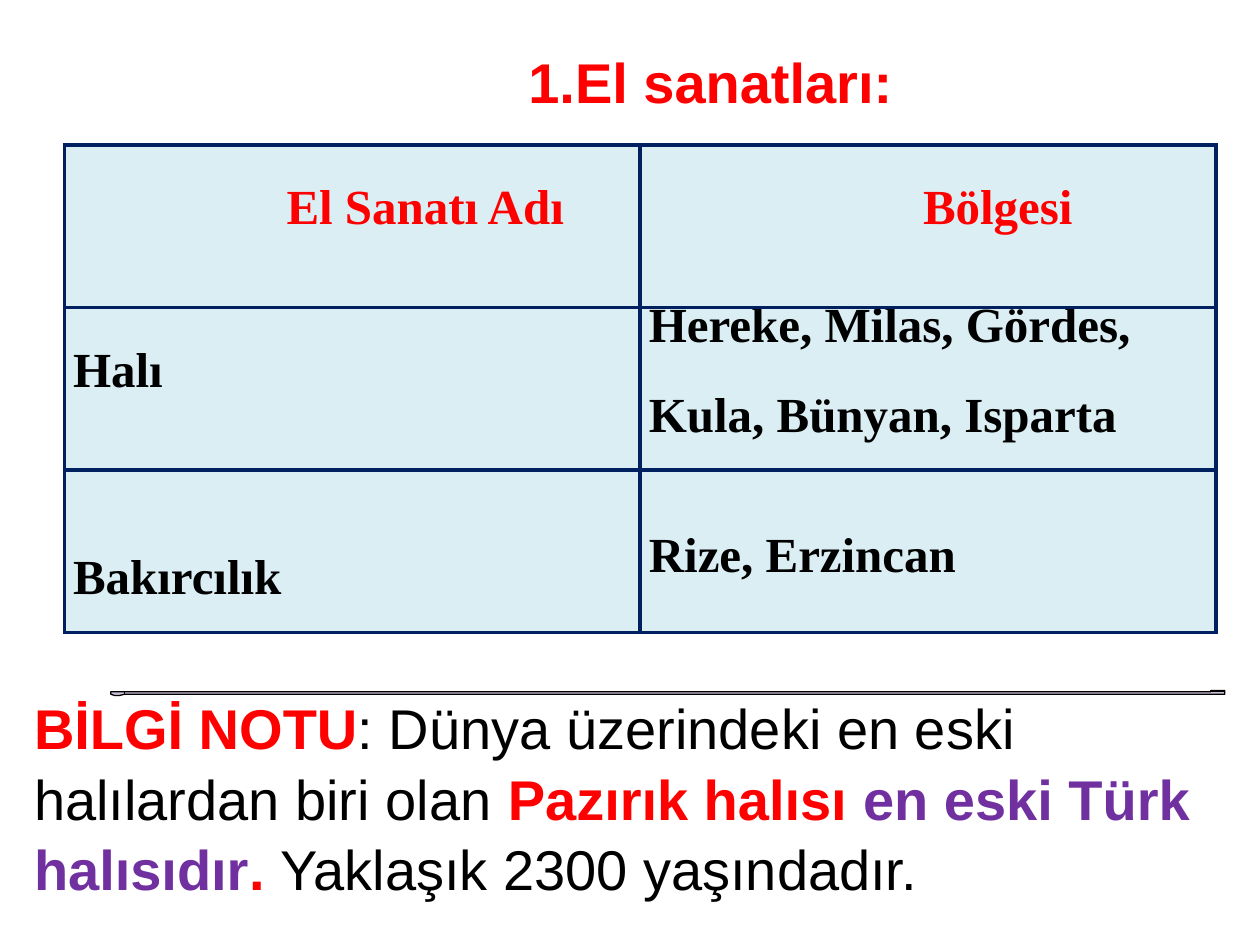
from lxml.etree import SubElement
from pptx import Presentation
from pptx.dml.color import RGBColor
from pptx.enum.text import MSO_ANCHOR as Anchor, MSO_AUTO_SIZE as AutoSize, PP_ALIGN as Align
from pptx.oxml.ns import qn
from pptx.util import Inches, Pt

RED = RGBColor(0xFF, 0x00, 0x00)
BLACK = RGBColor(0x00, 0x00, 0x00)
PURPLE = RGBColor(0x70, 0x30, 0xA0)
NAVY = RGBColor(0x00, 0x20, 0x60)
PALE_BLUE = RGBColor(0xDA, 0xEE, 0xF3)
LILAC = RGBColor(0xCC, 0xC0, 0xD9)
LINE_PITCH = 12.9


def style_run(run, face, size, color, bold=True):
    run.font.name = face
    run.font.size = Pt(size)
    run.font.color.rgb = color
    run.font.bold = bold


def add_border(cell, side):
    edge = SubElement(cell._tc.get_or_add_tcPr(), qn(f"a:ln{side}"), w=str(Pt(2.25)))
    fill = SubElement(edge, qn("a:solidFill"))
    SubElement(fill, qn("a:srgbClr"), val=str(NAVY))


prs = Presentation()
prs.slide_width, prs.slide_height = Inches(10), Inches(7.5)
slide = prs.slides.add_slide(prs.slide_layouts[5])

title = slide.shapes.title
title.left, title.top = Inches(0.98), Inches(0.3)
title.width, title.height = Inches(8.82), Inches(0.94)
heading = title.text_frame
heading.text = "El sanatları:"
heading.auto_size = AutoSize.NONE
heading.vertical_anchor = Anchor.MIDDLE
heading.margin_bottom = Inches(0.3)
heading_line = heading.paragraphs[0]
heading_line.alignment = Align.CENTER
style_run(heading_line.runs[0], "Arial", 32, RED)
numbering = heading_line._p.get_or_add_pPr()
numbering.set("marL", str(Inches(0.5)))
numbering.set("indent", "0")
number_color = SubElement(numbering, qn("a:buClr"))
SubElement(number_color, qn("a:srgbClr"), val=str(RED))
SubElement(numbering, qn("a:buFont"), typeface="Arial")
SubElement(numbering, qn("a:buAutoNum"), type="arabicPeriod")

# (text, lines of space above the first line)
crafts_rows = [
    [("El Sanatı Adı", 3), ("Bölgesi", 3)],
    [("Halı", 3), ("Hereke, Milas, Gördes,\nKula, Bünyan, Isparta", 1)],
    [("Bakırcılık", 5), ("Rize, Erzincan", 4)],
]
header_indents = [1.16, 1.11]
crafts = slide.shapes.add_table(
    3, 2, Inches(0.51), Inches(1.15), Inches(9.14), Inches(3.87)).table
for column in crafts.columns:
    column.width = Inches(4.57)
for r, row in enumerate(crafts_rows):
    crafts.rows[r].height = Inches(1.29)
    for c, (text, lines_above) in enumerate(row):
        cell = crafts.cell(r, c)
        cell.margin_left = cell.margin_right = cell.margin_bottom = 0
        cell.margin_top = Pt(lines_above * LINE_PITCH)
        for side in "LRTB":
            add_border(cell, side)
        cell.fill.solid()
        cell.fill.fore_color.rgb = PALE_BLUE
        cell.text_frame.text = text
        for i, paragraph in enumerate(cell.text_frame.paragraphs):
            paragraph.line_spacing = Pt(LINE_PITCH)
            paragraph.space_before = Pt(3 * LINE_PITCH if i else 0)
            paragraph.alignment = Align.LEFT if r else Align.CENTER
            indent = 0.07 if r else header_indents[c]
            paragraph._p.get_or_add_pPr().set("marL", str(Inches(indent)))
            style_run(paragraph.runs[0], "Times New Roman", 28, BLACK if r else RED)

scroll_outline = [
    (0.88, 5.49), (9.61, 5.49), (9.61, 5.48), (9.72, 5.48), (9.72, 5.51),
    (0.99, 5.51), (0.95, 5.52), (0.91, 5.52), (0.88, 5.51),
]
builder = slide.shapes.build_freeform(
    Inches(scroll_outline[0][0]), Inches(scroll_outline[0][1]))
builder.add_line_segments([(Inches(x), Inches(y)) for x, y in scroll_outline[1:]], close=True)
scroll = builder.convert_to_shape()
scroll.shadow.inherit = False
scroll.fill.solid()
scroll.fill.fore_color.rgb = LILAC
scroll.line.color.rgb = BLACK
scroll.line.width = Pt(0.75)

for x1, y1, x2, y2 in [(0.99, 5.49, 0.99, 5.51), (9.61, 5.49, 9.72, 5.49)]:
    curl = slide.shapes.add_connector(1, Inches(x1), Inches(y1), Inches(x2), Inches(y2))
    curl.line.color.rgb = BLACK
    curl.line.width = Pt(0.75)
    SubElement(curl._element.spPr, qn("a:effectLst"))

note = slide.shapes.add_textbox(
    Inches(0.27), Inches(5.48), Inches(9.45), Inches(0.87)).text_frame
note.word_wrap = True
note.margin_left = note.margin_right = note.margin_top = note.margin_bottom = 0
note_line = note.paragraphs[0]
note_line.line_spacing = 1.05
for text, color, bold in [
    ("BİLGİ NOTU", RED, True),
    (": Dünya üzerindeki en eski halılardan biri olan ", BLACK, False),
    ("Pazırık halısı ", RED, True),
    ("en eski Türk halısıdır", PURPLE, True),
    (". ", RED, True),
    ("Yaklaşık 2300 yaşındadır.", BLACK, False),
]:
    run = note_line.add_run()
    run.text = text
    style_run(run, "Arial", 32, color, bold)

prs.save("out.pptx")
